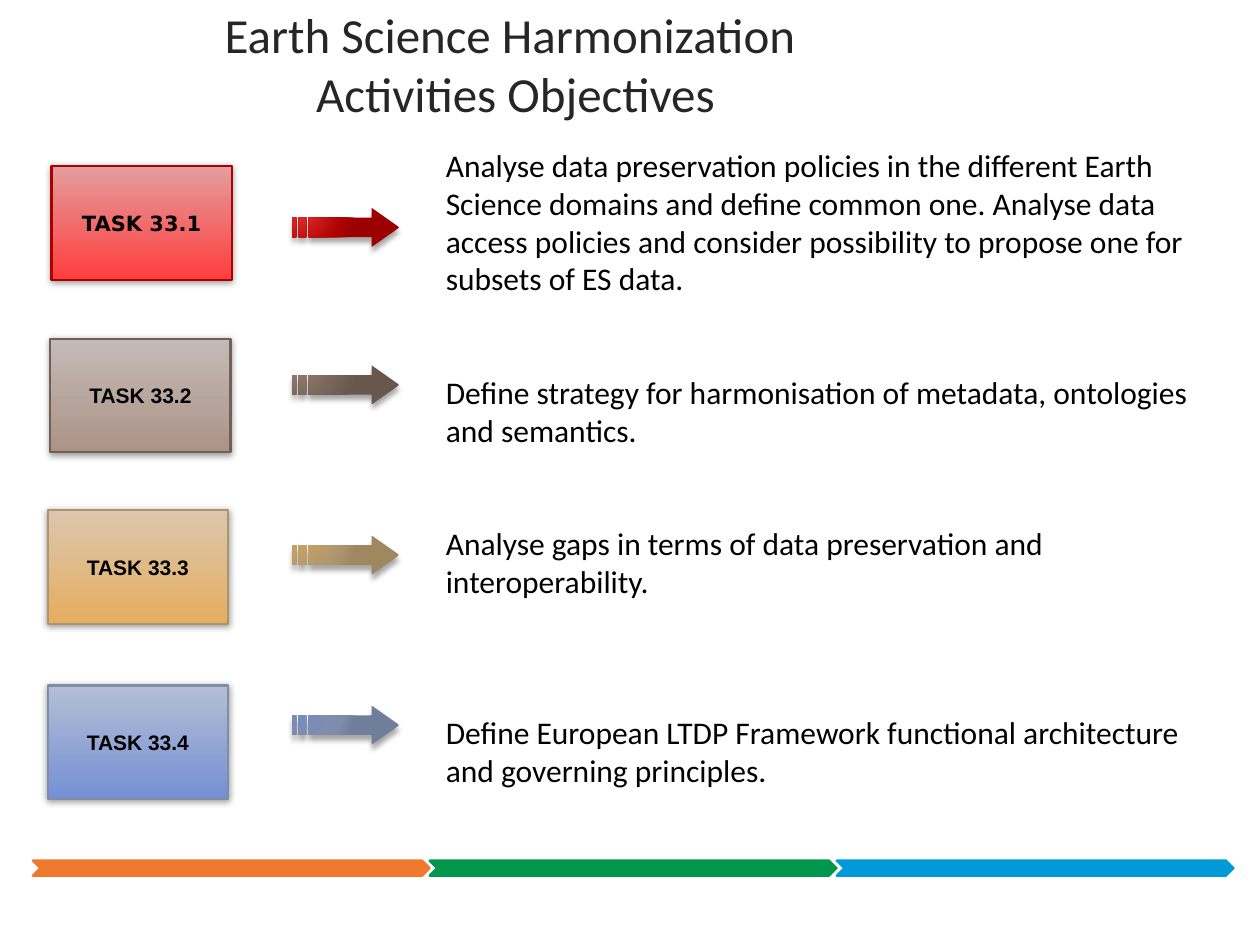
from lxml import etree
from pptx import Presentation, util as u
from pptx.dml.color import RGBColor
from pptx.enum import shapes, text
from pptx.oxml.ns import qn

HUES = {
    "ink": "000000", "title": "262626",
    "orange": "EF792F", "green": "00964B", "blue": "0099D8",
}
TASKS = [
    {"name": "TASK 33.1", "font": "DejaVu Sans", "box": (0.41, 1.32), "arrow": 1.65,
     "face": ("E49D9D", "FF3D3D"), "glow": ("E62F2F", "AD0101", "9C0101"), "gap": 0,
     "goal": "Analyse data preservation policies in the different Earth Science domains "
             "and define common one. Analyse data access policies and consider "
             "possibility to propose one for subsets of ES data."},
    {"name": "TASK 33.2", "font": "Arial", "box": (0.4, 2.69), "arrow": 2.9,
     "face": ("C3BBB7", "AC9387"), "glow": ("947B6F", "726056", "67574D"), "gap": 2,
     "goal": "Define strategy for harmonisation of metadata, ontologies and semantics."},
    {"name": "TASK 33.3", "font": "Arial", "box": (0.38, 4.05), "arrow": 4.25,
     "face": ("DBC7AD", "E5AD60"), "glow": ("CEA363", "AC956E", "9F875F"), "gap": 2,
     "goal": "Analyse gaps in terms of data preservation and interoperability."},
    {"name": "TASK 33.4", "font": "Arial", "box": (0.38, 5.44), "arrow": 5.6,
     "face": ("B4BED5", "7590D4"), "glow": ("778DC1", "808DA9", "707E9B"), "gap": 3,
     "goal": "Define European LTDP Framework functional architecture "
             "and governing principles."},
]
LINE = 21.6


def rgb(hue):
    return RGBColor.from_string(hue)


def area(box):
    return [u.Inches(n) for n in box]


def write(frame, words, size=18, font="Calibri", hue=HUES["ink"], bold=False,
          align=text.PP_ALIGN.LEFT, anchor=text.MSO_ANCHOR.TOP, gaps=None):
    frame.word_wrap = True
    frame.auto_size = text.MSO_AUTO_SIZE.NONE
    frame.vertical_anchor = anchor
    frame.text = words
    for spot, para in enumerate(frame.paragraphs):
        para.alignment = align
        if gaps and gaps[spot]:
            para.space_before = u.Pt(gaps[spot])
        for run in para.runs:
            run.font.size = u.Pt(size)
            run.font.name = font
            run.font.bold = bold
            run.font.color.rgb = rgb(hue)


def node(home, tag, **traits):
    return etree.SubElement(home, qn(tag), {k: str(v) for k, v in traits.items()})


def blend(shape, stops, radial=False):
    shape.fill.background()
    props = shape.element.spPr
    grad = etree.Element(qn("a:gradFill"), rotWithShape="1")
    row = node(grad, "a:gsLst")
    for place, hue in stops:
        node(node(row, "a:gs", pos=place * 1000), "a:srgbClr", val=hue)
    if radial:
        track = node(grad, "a:path", path="circle")
        node(track, "a:fillToRect", l=15000, t=15000, r=100000, b=100000)
    else:
        node(grad, "a:lin", ang=90 * 60000, scaled=0)
    props.replace(props.find(qn("a:noFill")), grad)


def shade(shape, alpha, blur, dist, angle):
    shape.shadow.inherit = False
    glow = node(shape.element.spPr.find(qn("a:effectLst")), "a:outerShdw",
                blurRad=u.Pt(blur), dist=u.Pt(dist), dir=angle * 60000, rotWithShape=0)
    node(node(glow, "a:srgbClr", val=HUES["ink"]), "a:alpha", val=alpha * 1000)


def draw_bar(slide, box):
    left, top, width, height = box
    side = 3.15
    mid = width - 2 * side
    parts = [("green", side, mid), ("orange", 0, side), ("blue", side + mid, side)]
    for hue, shift, wide in parts:
        part = slide.shapes.add_shape(shapes.MSO_SHAPE.CHEVRON,
                                      *area((left + shift, top, wide, height)))
        part.shadow.inherit = False
        part.fill.solid()
        part.fill.fore_color.rgb = rgb(HUES[hue])
        part.line.color.rgb = rgb(HUES[hue])
        part.line.width = u.Pt(1.25)


def draw_title(slide, box):
    title = slide.shapes.title
    title.left, title.top, title.width, title.height = area(box)
    write(title.text_frame, "Earth Science Harmonization \vActivities Objectives",
          size=28, hue=HUES["title"], align=text.PP_ALIGN.CENTER,
          anchor=text.MSO_ANCHOR.BOTTOM)


def draw_task(slide, box, task):
    card = slide.shapes.add_shape(shapes.MSO_SHAPE.FLOWCHART_PROCESS, *area(box))
    blend(card, zip((0, 100), task["face"]))
    card.line.color.rgb = rgb(task["glow"][1])
    card.line.width = u.Pt(1.25)
    shade(card, 40, 4, 1, 88)
    write(card.text_frame, task["name"], size=12, font=task["font"], bold=True,
          align=text.PP_ALIGN.CENTER, anchor=text.MSO_ANCHOR.MIDDLE)


def draw_arrow(slide, box, task):
    left, top, width, height = box
    high, low = height / 4, height * 3 / 4
    neck = 0.63
    head = [(neck, 0), (neck, high), (0.13, high), (0.13, low), (neck, low),
            (neck, height), (width, height / 2)]
    bars = [[(a, high), (a, low), (b, low), (b, high)]
            for a, b in ((0.05, 0.11), (0, 0.03))]
    pen = None
    for ring in [head] + bars:
        first, *rest = [(u.Inches(left + x), u.Inches(top + y)) for x, y in ring]
        if pen is None:
            pen = slide.shapes.build_freeform(*first)
        else:
            pen.move_to(*first)
        pen.add_line_segments(rest, close=True)
    arrow = pen.convert_to_shape()
    blend(arrow, zip((0, 76, 100), task["glow"]), radial=True)
    arrow.line.fill.background()
    shade(arrow, 35, 3, 3, 90)


def draw_goals(slide, box):
    goals = slide.shapes.add_textbox(*area(box))
    write(goals.text_frame, "\n".join(task["goal"] for task in TASKS),
          gaps=[task["gap"] * LINE for task in TASKS])


def main():
    deck = Presentation()
    deck.slide_width, deck.slide_height = u.Inches(10), u.Inches(7.5)
    slide = deck.slides.add_slide(deck.slide_layouts[5])
    draw_bar(slide, (0.26, 6.83, 9.53, 0.12))
    draw_title(slide, (0.38, 0.42, 7.42, 0.6))
    for task in TASKS:
        draw_task(slide, (*task["box"], 1.43, 0.9), task)
        draw_arrow(slide, (2.32, task["arrow"], 0.85, 0.31), task)
    draw_goals(slide, (3.44, 1.11, 6.37, 5.55))
    deck.save("out.pptx")


if __name__ == "__main__":
    main()
